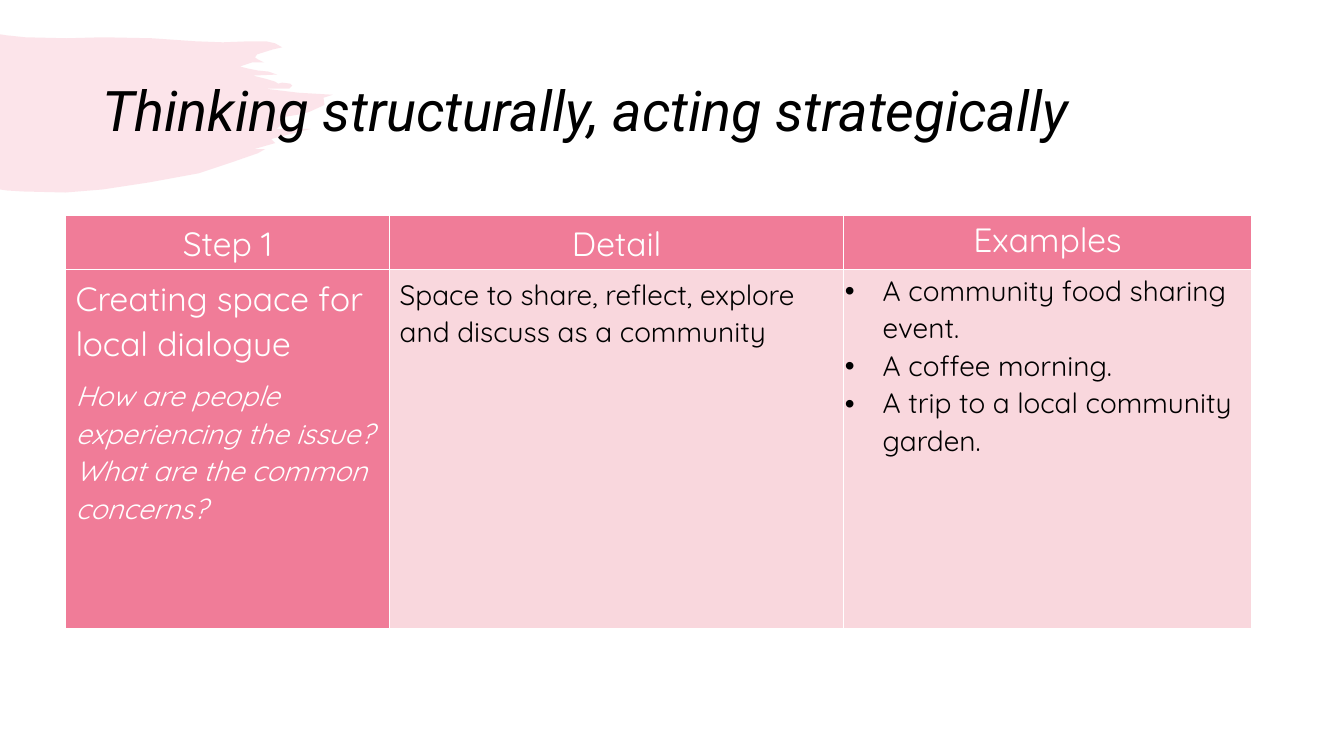
from lxml import etree
from pptx import Presentation
from pptx import util as u
from pptx.dml.color import RGBColor
from pptx.enum import text
from pptx.oxml import ns

COLORS = {"pink": "F07C98", "pale": "F9D7DD", "white": "FFFFFF", "black": "000000"}

# Brush stroke outline, in hundredths of an inch (0.72 pt)
BRUSH = [
    (0, 34), (6, 35), (25, 37), (66, 38), (102, 37), (151, 38), (194, 41),
    (221, 42), (248, 41), (264, 41), (273, 43), (280, 47), (271, 49), (255, 54),
    (253, 57), (256, 59), (262, 62), (250, 62), (238, 66), (246, 68), (256, 70),
    (266, 71), (275, 74), (251, 75), (263, 78), (273, 81), (276, 83), (280, 82),
    (288, 83), (290, 85), (287, 88), (284, 88), (263, 88), (296, 92), (330, 94),
    (321, 97), (322, 104), (318, 106), (307, 111), (300, 113), (283, 116),
    (280, 120), (278, 125), (274, 128), (308, 128), (269, 138), (273, 142),
    (252, 148), (263, 148), (256, 152), (233, 160), (197, 172), (148, 181),
    (102, 188), (65, 191), (23, 190), (7, 189), (0, 188),
]


def color(name):
    return RGBColor.from_string(COLORS[name])


class SlideBuilder:
    """Holds the text style and the current slide."""

    def __init__(self, slide, body_font, title_font):
        self.slide = slide
        self.body_font = body_font
        self.title_font = title_font

    def add_run(self, paragraph, words, size, ink, font=None, italic=False):
        run = paragraph.add_run()
        run.text = words
        run.font.name = font or self.body_font
        run.font.size = u.Pt(size)
        run.font.italic = italic
        run.font.color.rgb = color(ink)

    def brush(self, points, fill, alpha):
        builder = self.slide.shapes.build_freeform(*points[0], scale=u.Pt(0.72))
        builder.add_line_segments(points[1:], close=True)
        shape = builder.convert_to_shape()
        shape.shadow.inherit = False
        shape.line.fill.background()
        shape.fill.solid()
        shape.fill.fore_color.rgb = color(fill)
        tint = next(shape.fill._xPr.iter(ns.qn("a:srgbClr")))
        etree.SubElement(tint, ns.qn("a:alpha"), val=str(alpha * 1000))

    def title(self, words, left, top, width, height):
        box = self.slide.shapes.add_textbox(*map(u.Pt, (left, top, width, height)))
        frame = box.text_frame
        frame.word_wrap = True
        frame.vertical_anchor = text.MSO_ANCHOR.MIDDLE
        paragraph = frame.paragraphs[0]
        paragraph.line_spacing = 0.9
        self.add_run(paragraph, words, 40, "black", self.title_font, italic=True)

    def table(self, left, top, widths, heights):
        frame = self.slide.shapes.add_table(
            len(heights), len(widths),
            *map(u.Pt, (left, top, sum(widths), sum(heights))))
        table = frame.table
        table.horz_banding = False
        for column, width in zip(table.columns, widths):
            column.width = u.Pt(width)
        for row, height in zip(table.rows, heights):
            row.height = u.Pt(height)
        return table

    def cell(self, cell, fill, ink, lines, centred=False, tight=False, bullets=False):
        """Fill one cell; each line is (words, size, italic)."""
        cell.margin_left = cell.margin_right = u.Pt(0.7 if tight else 7.2)
        cell.margin_top = cell.margin_bottom = u.Pt(0.7 if tight else 3.6)
        self.borders(cell)
        cell.fill.solid()
        cell.fill.fore_color.rgb = color(fill)
        frame = cell.text_frame
        for index, (words, size, italic) in enumerate(lines):
            paragraph = frame.add_paragraph() if index else frame.paragraphs[0]
            paragraph.line_spacing = 1.07
            paragraph.space_after = u.Pt(0 if bullets else 8)
            if centred:
                paragraph.alignment = text.PP_ALIGN.CENTER
            if bullets:
                self.bullet(paragraph, 27)
            self.add_run(paragraph, words, size, ink, italic=italic)

    def borders(self, cell):
        properties = cell._tc.get_or_add_tcPr()
        for side in ("lnL", "lnR", "lnT", "lnB"):
            line = etree.SubElement(properties, ns.qn("a:" + side), w=str(u.Pt(1)))
            solid = etree.SubElement(line, ns.qn("a:solidFill"))
            etree.SubElement(solid, ns.qn("a:srgbClr"), val=COLORS["white"])

    def bullet(self, paragraph, indent):
        properties = paragraph._p.get_or_add_pPr()
        properties.set("marL", str(u.Pt(indent)))
        properties.set("indent", str(-u.Pt(indent)))
        etree.SubElement(properties, ns.qn("a:buFont"), typeface="Arial")
        etree.SubElement(properties, ns.qn("a:buChar"), char="•")


def main():
    presentation = Presentation()
    presentation.slide_width = u.Pt(960)
    presentation.slide_height = u.Pt(540)
    slide = presentation.slides.add_slide(presentation.slide_layouts[6])
    builder = SlideBuilder(slide, "Quicksand", "Roboto")

    # Brush stroke and title
    builder.brush(BRUSH, "pink", alpha=20)
    builder.title("Thinking structurally, acting strategically", 66, 28.8, 860, 104.4)

    # Table header
    table = builder.table(46.8, 153.8, [231.5, 324.5, 291], [39, 256])
    for column, heading in enumerate(["Step 1", "Detail", "Examples"]):
        builder.cell(table.cell(0, column), "pink", "white", [(heading, 24, False)],
                     centred=True, tight=heading == "Examples")

    # Table body
    builder.cell(table.cell(1, 0), "pink", "white", [
        ("Creating space for local dialogue", 24, False),
        ("How are people experiencing the issue? What are the common concerns?", 20, True),
    ])
    builder.cell(table.cell(1, 1), "pale", "black", [
        ("Space to share, reflect, explore and discuss as a community", 20, False),
    ])
    examples = ["A community food sharing event.", "A coffee morning.",
                "A trip to a local community garden."]
    builder.cell(table.cell(1, 2), "pale", "black",
                 [(example, 20, False) for example in examples],
                 tight=True, bullets=True)

    presentation.save("out.pptx")


if __name__ == "__main__":
    main()
